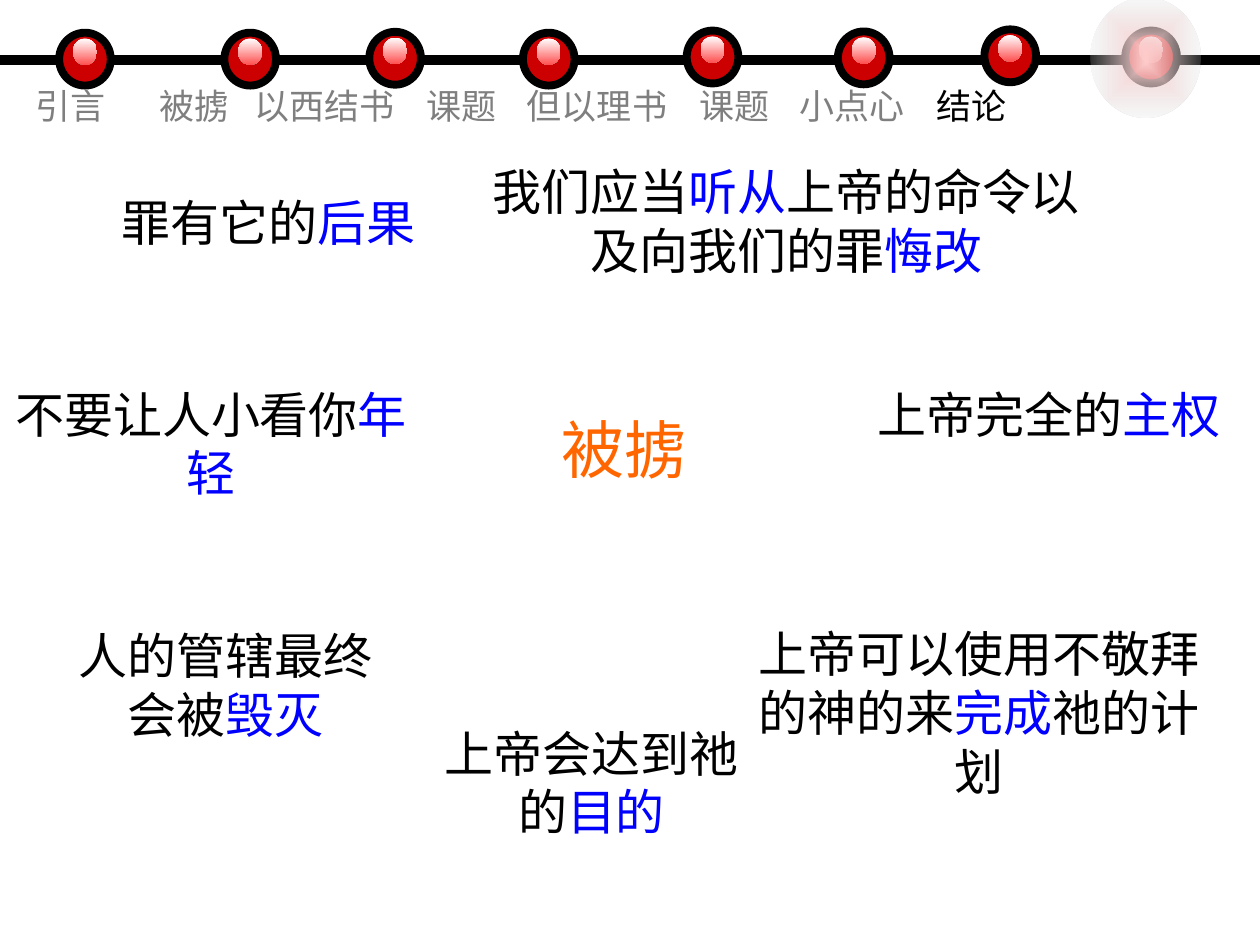
from dataclasses import dataclass

from lxml import etree
from pptx import Presentation
from pptx import util as u
from pptx.dml.color import RGBColor
from pptx.enum import shapes, text
from pptx.oxml import parse_xml
from pptx.oxml.ns import nsdecls, qn


@dataclass(frozen=True)
class Theme:
    font: str = "Noto Sans CJK SC"
    ink: str = "000000"
    key: str = "0000FF"
    muted: str = "7F7F7F"
    ball: str = "CC0000"
    title_outline: str = "FF6600"
    shine: tuple = (("FFFFFF", 100), ("FF5050", 100))
    glow: tuple = (("FFCCCC", 100), ("DDDDDD", 20))
    title_size: int = 36
    body_size: int = 28
    label_size: int = 20


def solid_fill(color, alpha=100):
    return (f'<a:solidFill {nsdecls("a")}><a:srgbClr val="{color}">'
            f'<a:alpha val="{alpha * 1000}"/></a:srgbClr></a:solidFill>')


class SlideBuilder:
    def __init__(self, slide, theme):
        self.slide = slide
        self.theme = theme

    def format(self, target, values):
        for name, value in values.items():
            setattr(target, name, value)

    def run(self, paragraph, words, size, color):
        run = paragraph.add_run()
        run.text = words
        self.format(run.font, {"size": u.Pt(size), "name": self.theme.font})
        run.font.color.rgb = RGBColor.from_string(color)
        east_asian = etree.SubElement(run.font._element, qn("a:ea"))
        east_asian.set("typeface", self.theme.font)
        return run

    def title(self, words, box):
        """Fill the title placeholder with translucent, outlined letters."""
        title = self.slide.shapes.title
        self.format(title, dict(zip(("left", "top", "width", "height"), map(u.Pt, box))))
        self.format(title.text_frame, {
            "word_wrap": False, "auto_size": text.MSO_AUTO_SIZE.NONE,
            "vertical_anchor": text.MSO_ANCHOR.TOP})
        paragraph = title.text_frame.paragraphs[0]
        paragraph.alignment = text.PP_ALIGN.CENTER
        run = self.run(paragraph, words, self.theme.title_size, self.theme.ball)
        properties = run.font._element
        properties.replace(properties.find(qn("a:solidFill")),
                           parse_xml(solid_fill(self.theme.ball, 70)))
        properties.insert(0, parse_xml(
            f'<a:ln {nsdecls("a")} w="12700">{solid_fill(self.theme.title_outline)}</a:ln>'))

    def text_box(self, box, wrap=True):
        frame = self.slide.shapes.add_textbox(*map(u.Pt, box)).text_frame
        self.format(frame, {"word_wrap": wrap,
                            "auto_size": text.MSO_AUTO_SIZE.SHAPE_TO_FIT_TEXT})
        return frame.paragraphs[0]

    def statement(self, box, parts, wrap=True):
        """Parts alternate between plain and highlighted words."""
        paragraph = self.text_box(box, wrap)
        paragraph.alignment = text.PP_ALIGN.CENTER
        for index, words in enumerate(parts):
            color = self.theme.key if index % 2 else self.theme.ink
            self.run(paragraph, words, self.theme.body_size, color)

    def labels(self, box, stops):
        """Set one label at each tab stop; the last is the current section."""
        paragraph = self.text_box(box)
        tabs = etree.SubElement(paragraph._p.get_or_add_pPr(), qn("a:tabLst"))
        for position, words in stops:
            etree.SubElement(tabs, qn("a:tab"), pos=str(u.Pt(position)), algn="l")
            current = words == stops[-1][1]
            color = self.theme.ink if current else self.theme.muted
            self.run(paragraph, "\t" + words, self.theme.label_size, color)

    def line(self, start, end, width):
        line = self.slide.shapes.add_connector(
            shapes.MSO_CONNECTOR.STRAIGHT, *map(u.Pt, start + end))
        line.line.width = u.Pt(width)
        line.line.color.rgb = RGBColor.from_string(self.theme.ink)
        etree.SubElement(line._element.spPr, qn("a:effectLst"))

    def ellipse(self, box, parent=None):
        parent = parent or self.slide
        ellipse = parent.shapes.add_shape(shapes.MSO_SHAPE.OVAL, *map(u.Pt, box))
        ellipse.shadow.inherit = False
        ellipse.line.fill.background()
        return ellipse

    def gradient(self, shape, stops, direction):
        stop_xml = "".join(
            f'<a:gs pos="{index * 100000}"><a:srgbClr val="{color}">'
            f'<a:alpha val="{alpha * 1000}"/></a:srgbClr></a:gs>'
            for index, (color, alpha) in enumerate(stops))
        shape._element.spPr.find(qn("a:prstGeom")).addnext(parse_xml(
            f'<a:gradFill {nsdecls("a")} rotWithShape="1">'
            f'<a:gsLst>{stop_xml}</a:gsLst>{direction}</a:gradFill>'))

    def ball(self, left, top):
        group = self.slide.shapes.add_group_shape()
        body = self.ellipse((left, top, 29.5, 30.2), group)
        body.fill.solid()
        body.fill.fore_color.rgb = RGBColor.from_string(self.theme.ball)
        body.line.color.rgb = RGBColor.from_string(self.theme.ink)
        body.line.width = u.Pt(4.5)
        shine = self.ellipse((left + 7.9, top + 3.3, 13.7, 15.1), group)
        self.gradient(shine, self.theme.shine, '<a:lin ang="5400000" scaled="1"/>')

    def glow(self, box):
        self.gradient(self.ellipse(box), self.theme.glow,
                      '<a:path path="shape"><a:fillToRect l="50000" t="50000" '
                      'r="50000" b="50000"/></a:path>')


BALLS = [(33.8, 18.7), (128.2, 18.7), (211, 18.2), (298.8, 18.7),
         (392.4, 17.5), (478.8, 18), (562.5, 16.8), (643, 17.5)]
LABELS = [(13, "引言"), (84, "被掳"), (138.5, "以西结书"), (236.5, "课题"),
          (294, "但以理书"), (392.5, "课题"), (450, "小点心"), (528, "结论")]
STATEMENTS = [
    ((274.3, 88.6, 350, 75), ("我们应当", "听从", "上帝的命令以及向我们的罪", "悔改")),
    ((478.8, 216, 241.2, 41), ("上帝完全的", "主权")),
    ((421.2, 352.8, 276.5, 108.7), ("上帝可以使用不敬拜的神的来", "完成", "祂的计划")),
    ((240.5, 409.7, 195, 75), ("上帝会达到祂的", "目的")),
    ((30.2, 354.2, 197.3, 75), ("人的管辖最终会被", "毁灭")),
    ((0, 216, 241.2, 75), ("不要让人小看你", "年轻")),
]


def main():
    presentation = Presentation()
    presentation.slide_width, presentation.slide_height = u.Pt(720), u.Pt(540)
    slide = presentation.slides.add_slide(presentation.slide_layouts[5])
    builder = SlideBuilder(slide, Theme())

    builder.line((-15, 34.4), (741, 34.4), 6)
    for left, top in BALLS:
        builder.ball(left, top)
    builder.glow((623.5, -1.4, 62.6, 68.4))
    builder.title("被掳", (222.5, 231.1, 269.3, 116.6))
    builder.statement((61.2, 106.6, 184.3, 41), ("罪有它的", "后果"), wrap=False)
    for box, parts in STATEMENTS:
        builder.statement(box, parts)
    builder.labels((0, 44.6, 720, 55.4), LABELS)
    presentation.save("out.pptx")


if __name__ == "__main__":
    main()
